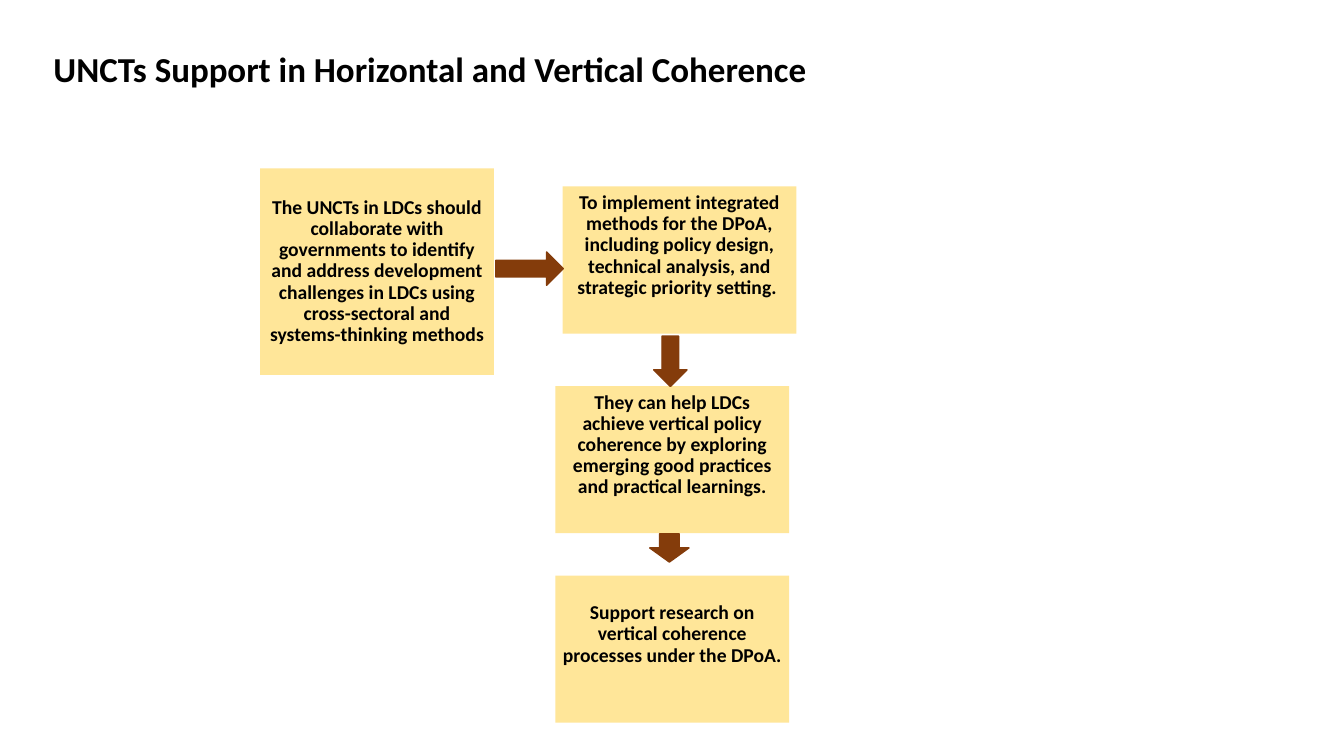
"""Build the slide on UNCT support in horizontal and vertical coherence."""
from pptx import Presentation
from pptx.dml.color import RGBColor
from pptx.enum.shapes import MSO_SHAPE
from pptx.enum.text import MSO_ANCHOR, MSO_AUTO_SIZE, PP_ALIGN
from pptx.util import Pt


def paint(fmt, hue):
    fmt.solid()
    fmt.fore_color.rgb = RGBColor.from_string(hue)


def write(shape, text, size, align, inset):
    frame = shape.text_frame
    frame.text = text
    para = frame.paragraphs[0]
    looks = {
        frame: {"word_wrap": True, "auto_size": MSO_AUTO_SIZE.NONE,
                "vertical_anchor": MSO_ANCHOR.MIDDLE, **inset},
        para: {"alignment": align, "line_spacing": 0.9},
    }
    for item, look in looks.items():
        for key, value in look.items():
            setattr(item, key, value)
    font = para.runs[0].font
    for key, value in {"name": "Calibri", "size": Pt(size), "bold": True}.items():
        setattr(font, key, value)
    paint(font.fill, "000000")


deck = Presentation()
deck.slide_width, deck.slide_height = Pt(960), Pt(540)
slide = deck.slides.add_slide(deck.slide_layouts[5])

title = slide.shapes.title
spot = {"left": 31, "top": 26, "width": 869, "height": 50}
for key, value in spot.items():
    setattr(title, key, Pt(value))
write(title, "UNCTs Support in Horizontal and Vertical Coherence", 25,
      PP_ALIGN.LEFT, {})

steps = [
    (185.8, 120.2, 147.6, 4.3,
     "The UNCTs in LDCs should collaborate with governments to identify and "
     "address development challenges in LDCs using cross-sectoral and "
     "systems-thinking methods"),
    (401.8, 133.2, 105.1, 25,
     "To implement integrated methods for the DPoA, including policy design, "
     "technical analysis, and strategic priority setting. "),
    (396.7, 275.8, 105.1, 25,
     "They can help LDCs achieve vertical policy coherence by exploring "
     "emerging good practices and practical learnings."),
    (396.7, 411.1, 105.1, 25,
     "Support research on vertical coherence processes under the DPoA. "),
]
for left, top, high, base, text in steps:
    box = slide.shapes.add_shape(MSO_SHAPE.RECTANGLE, Pt(left), Pt(top),
                                 Pt(167), Pt(high))
    box.shadow.inherit = False
    paint(box.fill, "FFE699")
    box.line.fill.background()
    inset = {"margin_" + side: Pt(4.3) for side in ("left", "right", "top")}
    write(box, text, 14, PP_ALIGN.CENTER, {**inset, "margin_bottom": Pt(base)})

arrows = [
    (354.2, 180, 48.2, 23.8, 0),
    (460.8, 246.2, 36, 23.8, 90),
    (468, 377.3, 20.2, 28.1, 90),
]
for *place, turn in arrows:
    arrow = slide.shapes.add_shape(MSO_SHAPE.RIGHT_ARROW, *map(Pt, place))
    arrow.rotation = turn
    arrow.shadow.inherit = False
    paint(arrow.fill, "843C0B")
    paint(arrow.line.fill, "843C0B")
    arrow.line.width = Pt(1)

deck.save("out.pptx")
